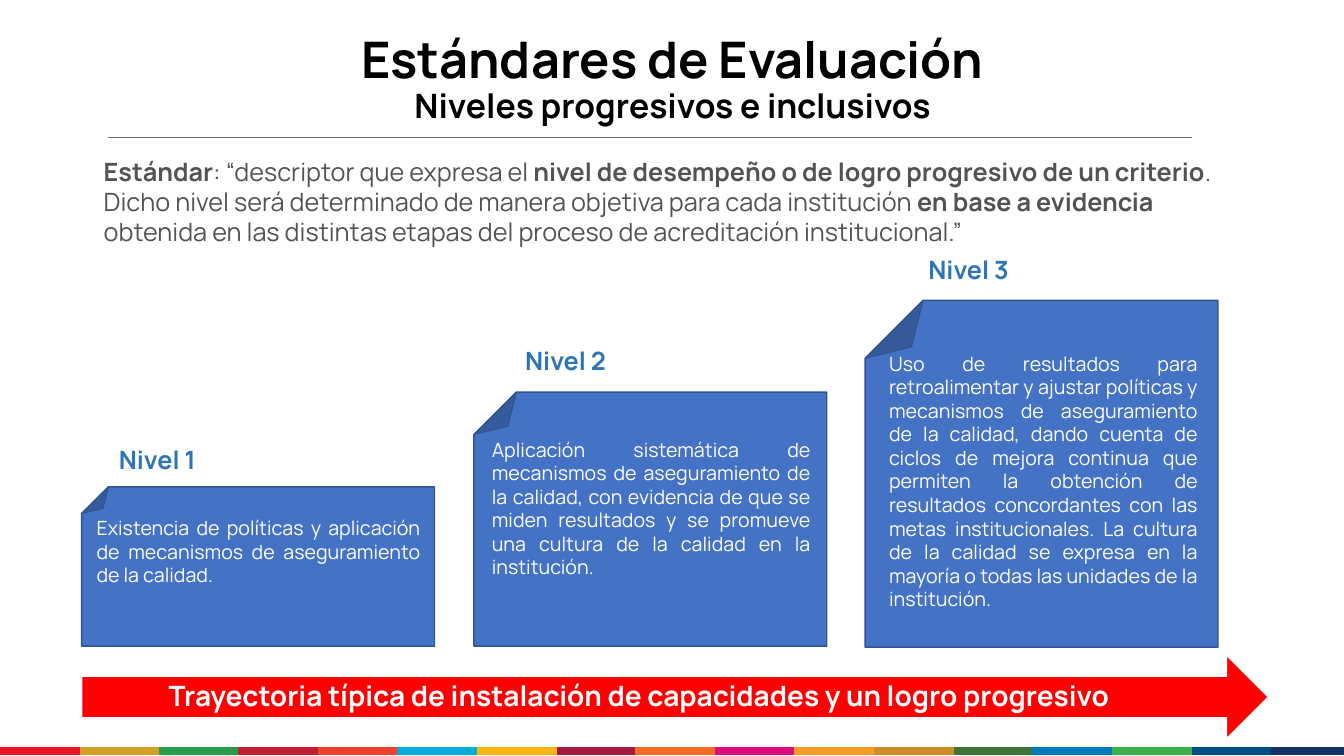
from dataclasses import dataclass

from lxml import etree
from pptx import Presentation
from pptx.dml.color import RGBColor
from pptx.enum.shapes import MSO_CONNECTOR, MSO_SHAPE
from pptx.enum.text import MSO_ANCHOR, PP_ALIGN
from pptx.oxml.ns import qn
from pptx.util import Pt

STRAIGHT = MSO_CONNECTOR.STRAIGHT
ARROW, FOLD = MSO_SHAPE.RIGHT_ARROW, MSO_SHAPE.FOLDED_CORNER
TOP, MIDDLE = MSO_ANCHOR.TOP, MSO_ANCHOR.MIDDLE
LEFT, CENTER, JUSTIFY = PP_ALIGN.LEFT, PP_ALIGN.CENTER, PP_ALIGN.JUSTIFY

SCALE = 9144  # EMU in one px, 100 px to the inch
WIDTH, HEIGHT = 1333, 750


@dataclass(frozen=True)
class Theme:
    font: str = "Manrope"
    black: str = "000000"
    white: str = "FFFFFF"
    gray: str = "525352"
    rule: str = "6B6B6B"
    label: str = "2E75B6"
    card: str = "4472C4"
    edge: str = "325491"
    red: str = "FF0000"
    strip: tuple = (
        "EA1425", "D29F28", "279B48", "C31F33", "EF402B", "00ADD8",
        "FCB612", "A31941", "F36D25", "E00C7F", "F99C24", "CF8D2A",
        "427338", "007BBA", "3EB049", "004E86", "153266")
    title: int = 36
    sub: int = 24
    banner: int = 20
    body: int = 18
    note: int = 14


def px(*sizes):
    return [size * SCALE for size in sizes]


class Board:
    def __init__(self, deck, theme):
        self.theme = theme
        self.slide = deck.slides.add_slide(deck.slide_layouts[6])

    def line(self, x1, y1, x2, y2, color, width):
        rule = self.slide.shapes.add_connector(STRAIGHT, *px(x1, y1, x2, y2))
        rule.line.color.rgb = RGBColor.from_string(color)
        rule.line.width = Pt(width)
        etree.SubElement(rule._element.spPr, qn("a:effectLst"))

    def shape(self, kind, box, fill, edge, turn=0):
        item = self.slide.shapes.add_shape(kind, *px(*box))
        item.shadow.inherit = False
        item.rotation = turn
        item.fill.solid()
        item.fill.fore_color.rgb = RGBColor.from_string(fill)
        item.line.color.rgb = RGBColor.from_string(edge)
        item.line.width = Pt(1)

    def text(self, box, runs, color, align=LEFT, anchor=TOP, wrap=True,
             space=1.0, pad=True):
        """Each run is (words, size, bold); a None run breaks the line."""
        frame = self.slide.shapes.add_textbox(*px(*box)).text_frame
        form = {"word_wrap": wrap, "vertical_anchor": anchor}
        if not pad:
            form.update(margin_left=0, margin_right=0,
                        margin_top=0, margin_bottom=0)
        for name, value in form.items():
            setattr(frame, name, value)
        para = frame.paragraphs[0]
        para.alignment, para.line_spacing = align, space
        for part in runs:
            if part is None:
                para.add_line_break()
                continue
            words, size, bold = part
            run = para.add_run()
            run.text = words
            style = {"name": self.theme.font, "size": Pt(size), "bold": bold}
            for name, value in style.items():
                setattr(run.font, name, value)
            run.font.color.rgb = RGBColor.from_string(color)


# Level: label box, card box, note box, note
LEVELS = [
    ((108, 436, 100, 40), (81, 483, 350, 158), (86, 507, 341, 81),
     "Existencia de políticas y aplicación de mecanismos de aseguramiento "
     "de la calidad."),
    ((511, 338, 105, 40), (470, 389, 350, 252), (478, 429, 336, 151),
     "Aplicación sistemática de mecanismos de aseguramiento de la calidad, "
     "con evidencia de que se miden resultados y se promueve una cultura de "
     "la calidad en la institución."),
    ((911, 247, 106, 40), (858, 298, 350, 344), (872, 344, 326, 293),
     "Uso de resultados para retroalimentar y ajustar políticas y mecanismos "
     "de aseguramiento de la calidad, dando cuenta de ciclos de mejora "
     "continua que permiten la obtención de resultados concordantes con las "
     "metas institucionales. La cultura de la calidad se expresa en la "
     "mayoría o todas las unidades de la institución."),
]

STANDARD = [
    ("Estándar", True),
    (": “descriptor que expresa el ", False),
    ("nivel de desempeño o de logro progresivo de un criterio", True),
    (". Dicho nivel será determinado de manera objetiva para cada "
     "institución ", False),
    ("en base a evidencia ", True),
    ("obtenida en las distintas etapas del proceso de acreditación "
     "institucional.”", False),
]


def main():
    deck = Presentation()
    deck.slide_width, deck.slide_height = px(WIDTH, HEIGHT)
    theme = Theme()
    board = Board(deck, theme)

    # Colour strip along the bottom
    for i, color in enumerate(theme.strip):
        start, end = round(i * 78.8), round((i + 1) * 78.8)
        board.line(start, 745, min(end, WIDTH), 745, color, 6)

    # Title and rule
    board.text((92, 7, 1150, 145),
               [("Estándares de Evaluación", theme.title, True), None,
                ("Niveles progresivos e inclusivos", theme.sub, True)],
               theme.black, CENTER, MIDDLE, space=0.9)
    board.line(107, 136, 1182, 136, theme.rule, 0.75)

    # Definition
    board.text((93, 150, 1148, 101),
               [(words, theme.body, bold) for words, bold in STANDARD],
               theme.gray)

    # Arrow banner
    board.shape(ARROW, (81, 650, 1177, 83), theme.red, theme.white)
    board.text((114, 671, 1040, 41),
               [("Trayectoria típica de instalación de capacidades y un logro "
                 "progresivo", theme.banner, True)],
               theme.white, CENTER, MIDDLE, space=0.9, pad=False)

    # Levels
    for i, (tag, card, area, note) in enumerate(LEVELS, 1):
        board.shape(FOLD, card, theme.card, theme.edge, turn=180)
        board.text(area, [(note, theme.note, False)], theme.white, JUSTIFY)
        board.text(tag, [(f"Nivel {i}", theme.body, True)], theme.label,
                   wrap=False)

    deck.save("out.pptx")


if __name__ == "__main__":
    main()
